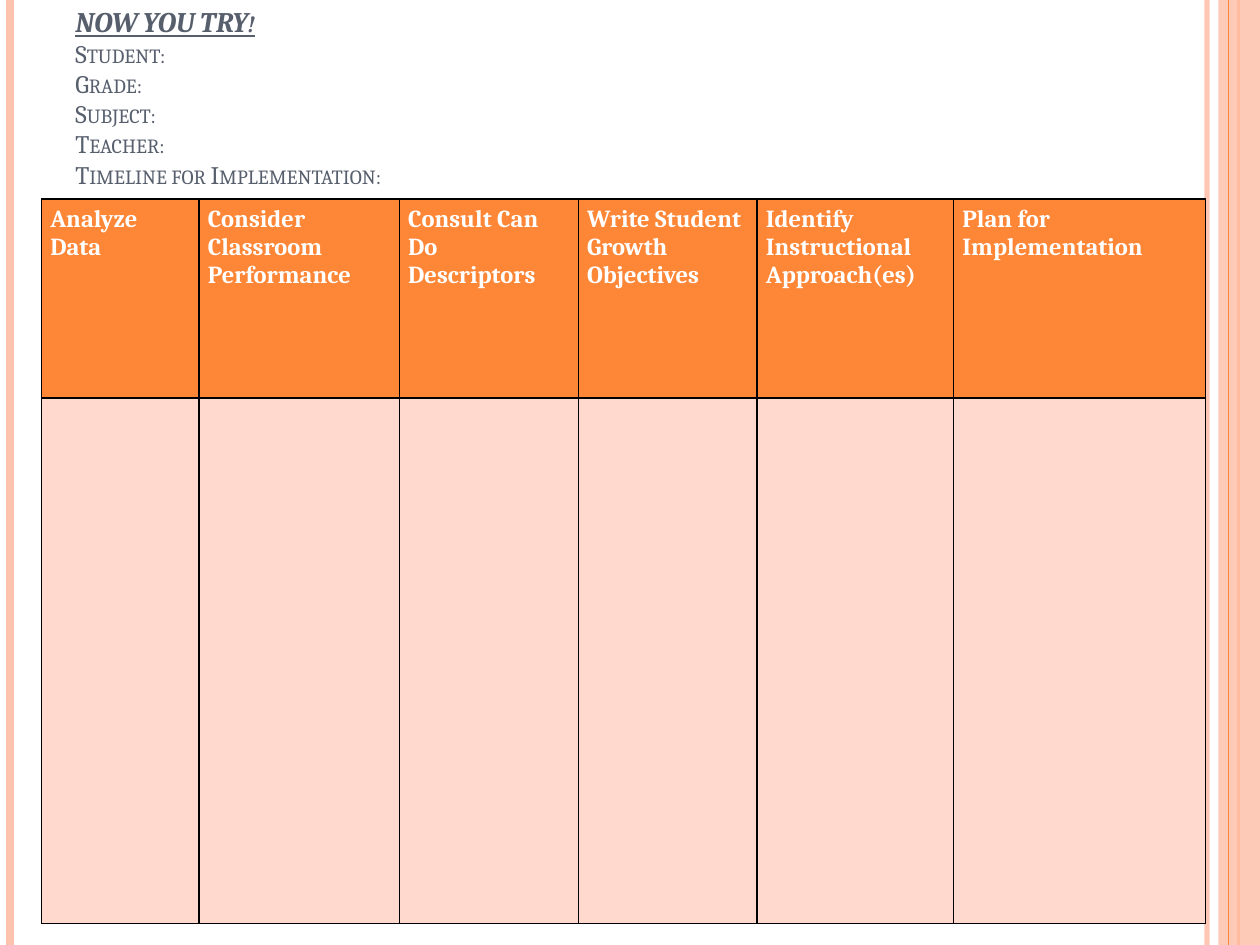
from lxml.etree import SubElement
from pptx import Presentation
from pptx.dml.color import RGBColor
from pptx.enum.shapes import MSO_CONNECTOR, MSO_SHAPE
from pptx.enum.text import MSO_ANCHOR
from pptx.oxml import parse_xml
from pptx.oxml.ns import nsdecls, qn
from pptx.util import Inches, Pt

COLORS = {
    "peach": "FEC3AE",
    "orange": "FE8637",
    "pale": "FFD9CE",
    "slate": "575F6D",
    "white": "FFFFFF",
    "border": "000000",
}
FONT = "Cambria"
SLIDE_HEIGHT = 7.5
HEADING = "NOW YOU TRY!"
FIELDS = ["Student:", "Grade:", "Subject:", "Teacher:", "Timeline for Implementation:"]
STEPS = [
    ("Analyze Data", 1.25),
    ("Consider Classroom Performance", 1.59),
    ("Consult Can Do Descriptors", 1.42),
    ("Write Student Growth Objectives", 1.42),
    ("Identify Instructional Approach(es)", 1.56),
    ("Plan for Implementation", 2),
]
ROW_HEIGHTS = [1.58, 4.17]


def rgb(name):
    return RGBColor.from_string(COLORS[name])


def set_opacity(element, percent):
    color = next(element.iter(qn("a:srgbClr")))
    SubElement(color, qn("a:alpha"), val=str(percent * 1000))


def format_run(run, size, color, bold=False):
    run.font.name = FONT
    run.font.size = Pt(size)
    run.font.bold = bold
    run.font.color.rgb = rgb(color)


def add_stripe(slide, x, color, width, opacity=100):
    """Draw a vertical line over the full slide height."""
    stripe = slide.shapes.add_connector(
        MSO_CONNECTOR.STRAIGHT, Inches(x), 0, Inches(x), Inches(SLIDE_HEIGHT))
    stripe.line.color.rgb = rgb(color)
    stripe.line.width = Pt(width)
    properties = stripe.element.spPr
    if opacity < 100:
        set_opacity(properties, opacity)
    SubElement(properties, qn("a:effectLst"))


def add_side_band(slide):
    band = slide.shapes.add_shape(
        MSO_SHAPE.RECTANGLE, Inches(9.67), 0, Inches(0.33), Inches(SLIDE_HEIGHT))
    band.shadow.inherit = False
    band.fill.solid()
    band.fill.fore_color.rgb = rgb("peach")
    set_opacity(band.element.spPr, 87)
    band.line.fill.background()


def add_student_details(slide):
    details = slide.shapes.add_textbox(
        Inches(0.5), Inches(0.3), Inches(8.17), Inches(1.25))
    frame = details.text_frame
    frame.word_wrap = True
    frame.vertical_anchor = MSO_ANCHOR.BOTTOM
    frame.text = "\n".join([HEADING, *FIELDS])
    for index, paragraph in enumerate(frame.paragraphs):
        is_heading = index == 0
        run = paragraph.runs[0]
        format_run(run, 16.2 if is_heading else 14.4, "slate", is_heading)
        run.font.italic = is_heading
        run.font.underline = is_heading
        run.font._element.set("cap", "small")


def add_borders(cell):
    """Put the four edges ahead of the fill, as the schema orders them."""
    properties = cell._tc.get_or_add_tcPr()
    for index, edge in enumerate(["lnL", "lnR", "lnT", "lnB"]):
        properties.insert(index, parse_xml(
            f'<a:{edge} {nsdecls("a")} w="{Pt(1)}"><a:solidFill>'
            f'<a:srgbClr val="{COLORS["border"]}"/></a:solidFill></a:{edge}>'))


def style_cell(cell, fill):
    cell.fill.solid()
    cell.fill.fore_color.rgb = rgb(fill)
    cell.margin_left = cell.margin_right = Inches(0.07)
    cell.margin_top = cell.margin_bottom = Inches(0.05)
    add_borders(cell)


def add_planning_table(slide):
    table = slide.shapes.add_table(
        len(ROW_HEIGHTS), len(STEPS), Inches(0.33), Inches(1.58),
        Inches(sum(width for _, width in STEPS)), Inches(sum(ROW_HEIGHTS))).table
    for row, height in zip(table.rows, ROW_HEIGHTS):
        row.height = Inches(height)
    for index, (step, width) in enumerate(STEPS):
        table.columns[index].width = Inches(width)
        header = table.cell(0, index)
        header.text_frame.text = step
        format_run(header.text_frame.paragraphs[0].runs[0], 14, "white", bold=True)
        style_cell(header, "orange")
        style_cell(table.cell(1, index), "pale")


def main():
    presentation = Presentation()
    presentation.slide_width = Inches(10)
    presentation.slide_height = Inches(SLIDE_HEIGHT)
    slide = presentation.slides.add_slide(presentation.slide_layouts[6])
    add_stripe(slide, 9.58, "peach", 3, opacity=93)
    add_stripe(slide, 0.08, "peach", 4.5)
    add_stripe(slide, 9.83, "orange", 1.5)
    add_side_band(slide)
    add_stripe(slide, 9.75, "orange", 0.75)
    add_student_details(slide)
    add_planning_table(slide)
    presentation.save("out.pptx")


if __name__ == "__main__":
    main()
